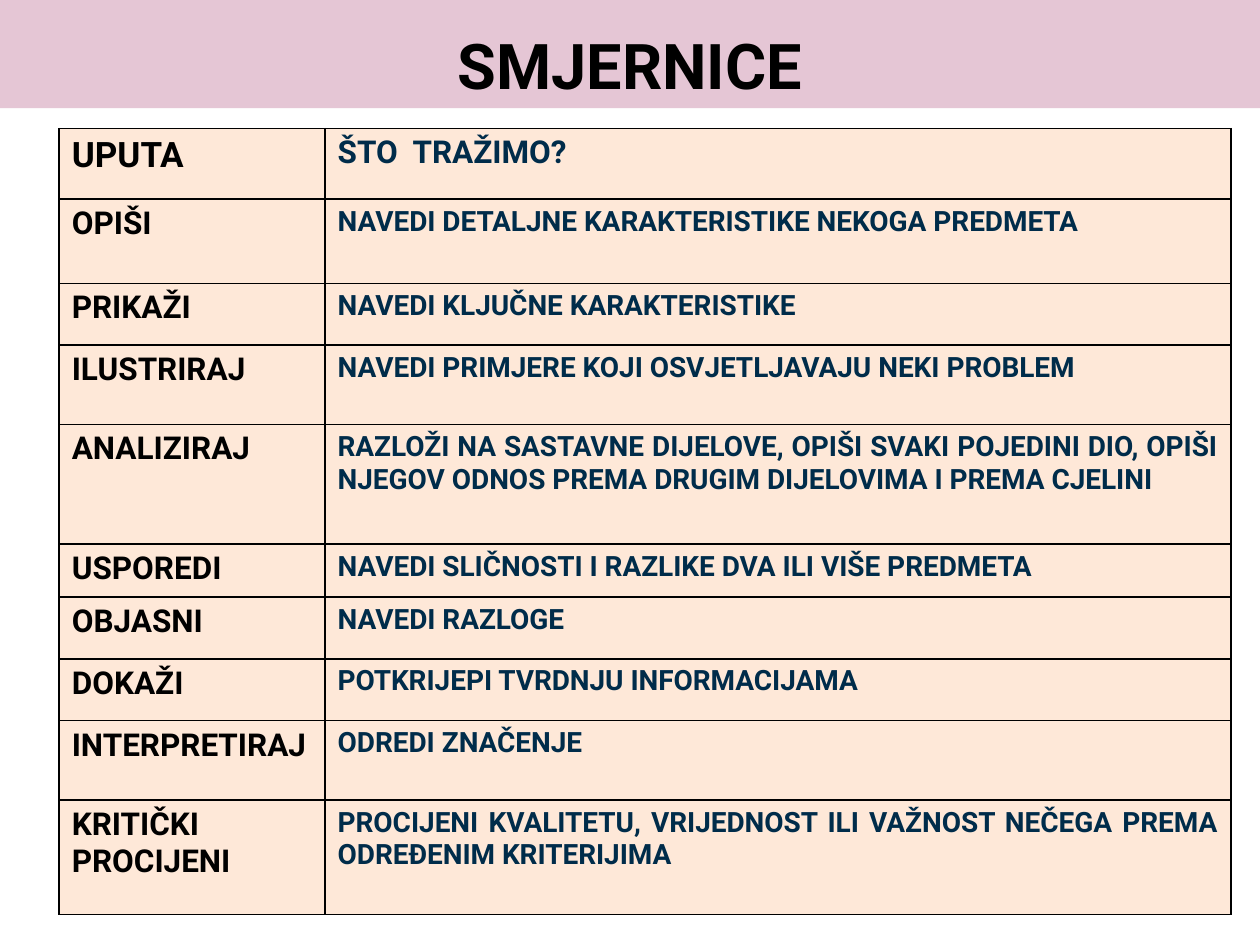
from dataclasses import dataclass
from lxml.etree import SubElement
from pptx import Presentation
from pptx.dml.color import RGBColor
from pptx.enum.shapes import MSO_SHAPE
from pptx.enum.text import MSO_ANCHOR, PP_ALIGN
from pptx.oxml.ns import qn
from pptx.util import Inches, Pt


@dataclass(frozen=True)
class Theme:
    font: str = "Roboto"
    band: str = "E5C6D5"
    cell: str = "FEE8D8"
    black: str = "000000"
    navy: str = "002C4A"
    title: int = 36
    header: int = 20
    term: int = 18
    body: int = 16


THEME = Theme()

ROWS = [
    (0.56, "UPUTA", "ŠTO  TRAŽIMO?"),
    (0.67, "OPIŠI", "NAVEDI DETALJNE KARAKTERISTIKE NEKOGA PREDMETA"),
    (0.49, "PRIKAŽI", "NAVEDI KLJUČNE KARAKTERISTIKE"),
    (0.63, "ILUSTRIRAJ", "NAVEDI PRIMJERE KOJI OSVJETLJAVAJU NEKI PROBLEM"),
    (0.95, "ANALIZIRAJ", "RAZLOŽI NA SASTAVNE DIJELOVE, OPIŠI SVAKI POJEDINI DIO, "
     "OPIŠI NJEGOV ODNOS PREMA DRUGIM DIJELOVIMA I PREMA CJELINI"),
    (0.42, "USPOREDI", "NAVEDI SLIČNOSTI I RAZLIKE DVA ILI VIŠE PREDMETA"),
    (0.49, "OBJASNI", "NAVEDI RAZLOGE"),
    (0.49, "DOKAŽI", "POTKRIJEPI TVRDNJU INFORMACIJAMA"),
    (0.63, "INTERPRETIRAJ", "ODREDI ZNAČENJE"),
    (0.91, "KRITIČKI PROCIJENI", "PROCIJENI KVALITETU, VRIJEDNOST ILI VAŽNOST "
     "NEČEGA PREMA ODREĐENIM KRITERIJIMA"),
]


def set_text(tf, text, size, color, align):
    tf.word_wrap = True
    p = tf.paragraphs[0]
    p.alignment = align
    r = p.add_run()
    r.text = text
    r.font.name = THEME.font
    r.font.size = Pt(size)
    r.font.bold = True
    r.font.color.rgb = RGBColor.from_string(color)


def fill(obj, color):
    obj.fill.solid()
    obj.fill.fore_color.rgb = RGBColor.from_string(color)


def set_borders(cell, color, width):
    tc_pr = cell._tc.get_or_add_tcPr()
    for i, side in enumerate(("lnL", "lnR", "lnT", "lnB")):
        ln = SubElement(tc_pr, qn(f"a:{side}"), w=str(Pt(width)))
        tc_pr.insert(i, ln)
        SubElement(SubElement(ln, qn("a:solidFill")), qn("a:srgbClr"), val=color)


def add_title_band(slide, left, top, width, height):
    sp = slide.shapes.add_shape(MSO_SHAPE.RECTANGLE, left, top, width, height)
    sp.shadow.inherit = False
    fill(sp, THEME.band)
    sp.line.fill.background()
    sp.text_frame.vertical_anchor = MSO_ANCHOR.BOTTOM
    set_text(sp.text_frame, "SMJERNICE", size=THEME.title, color=THEME.black,
             align=PP_ALIGN.CENTER)


def add_guide_table(slide, left, top, width, height):
    table = slide.shapes.add_table(len(ROWS), 2, left, top, width, height).table
    table.first_row = table.horz_banding = False
    term_width = Inches(2.11)
    table.columns[0].width = term_width
    table.columns[1].width = width - term_width
    for i, (row_height, term, meaning) in enumerate(ROWS):
        table.rows[i].height = Inches(row_height)
        term_size, meaning_size = (
            (THEME.term, THEME.body) if i else (THEME.header, THEME.term))
        parts = ((term, term_size, THEME.black), (meaning, meaning_size, THEME.navy))
        for cell, (text, size, color) in zip(table.rows[i].cells, parts):
            fill(cell, THEME.cell)
            set_borders(cell, THEME.black, 1)
            set_text(cell.text_frame, text, size=size, color=color,
                     align=PP_ALIGN.JUSTIFY)


def main():
    prs = Presentation()
    prs.slide_width, prs.slide_height = Inches(10), Inches(7.5)
    slide = prs.slides.add_slide(prs.slide_layouts[6])
    add_title_band(slide, 0, 0, prs.slide_width, Inches(0.86))
    add_guide_table(slide, Inches(0.47), Inches(1.02), Inches(9.3), Inches(6.25))
    prs.save("out.pptx")


if __name__ == "__main__":
    main()
